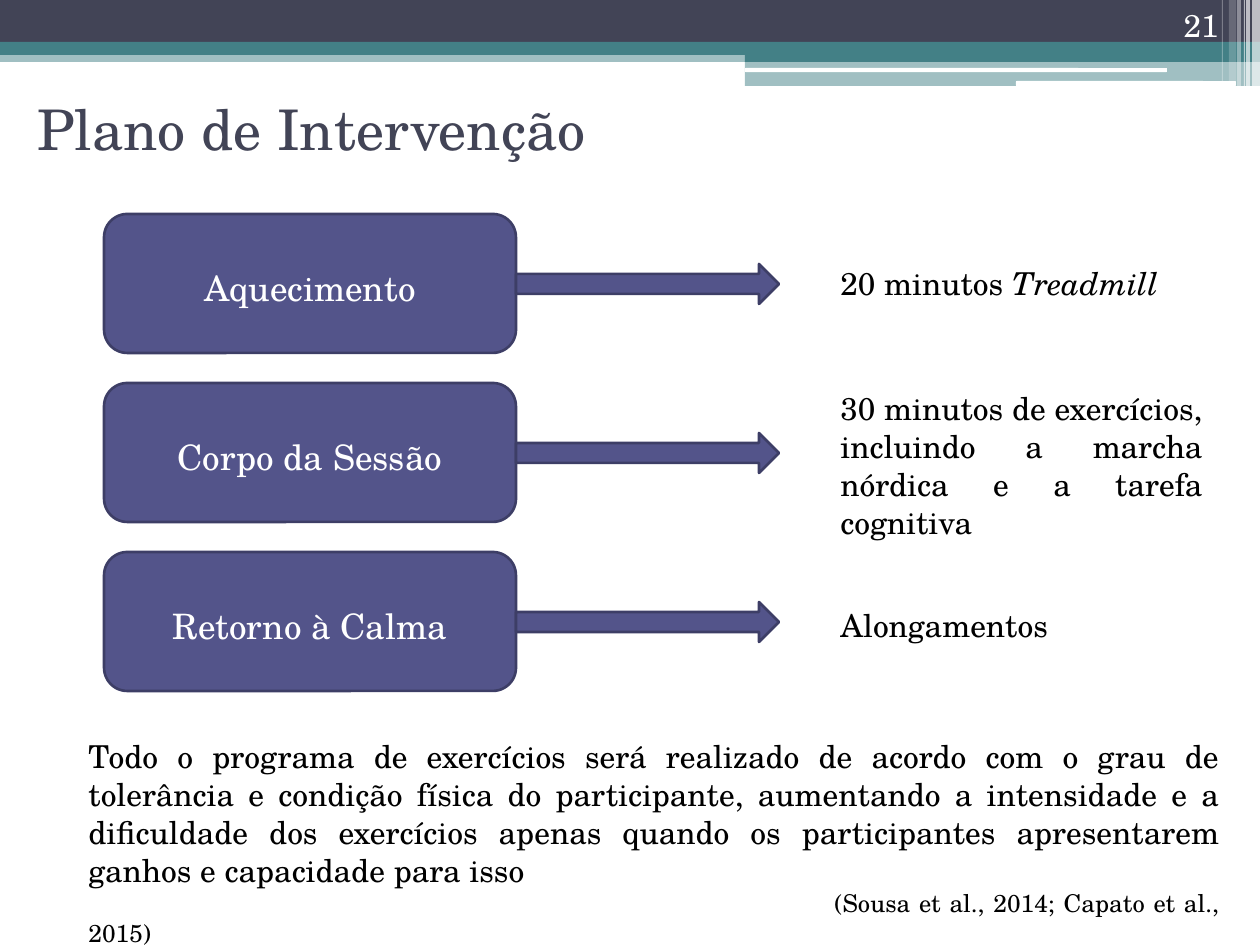
from pptx import Presentation, util as u
from pptx.dml.color import RGBColor
from pptx.enum import shapes, text
from pptx.oxml.ns import qn
from lxml import etree

SCALE = 914400 / 126  # EMU per px
FONT = "TeX Gyre Schola"
NAVY, TEAL, WHITE, BLACK = "424456", "438086", "FFFFFF", "000000"
INDIGO, OUTLINE = "53548A", "3D3E66"
RECT = shapes.MSO_SHAPE.RECTANGLE
ROUNDED = shapes.MSO_SHAPE.ROUNDED_RECTANGLE
ARROW = shapes.MSO_SHAPE.RIGHT_ARROW
LEFT, RIGHT = text.PP_ALIGN.LEFT, text.PP_ALIGN.RIGHT
CENTER, JUSTIFY = text.PP_ALIGN.CENTER, text.PP_ALIGN.JUSTIFY
TOP, MIDDLE, BOTTOM = text.MSO_ANCHOR.TOP, text.MSO_ANCHOR.MIDDLE, text.MSO_ANCHOR.BOTTOM

# preset, (left, top, width, height), fill, opacity %
HEADER_BANDS = [
    (RECT, (0, 50, 1260, 12), TEAL, 50),
    (RECT, (0, 0, 1260, 43), NAVY, 100),
    (RECT, (0, 42, 1260, 13), TEAL, 100),
    (RECT, (745, 49, 515, 13), TEAL, 100),
    (RECT, (745, 61, 515, 25), TEAL, 50),
    (ROUNDED, (745, 68, 422, 4), WHITE, 100),
    (ROUNDED, (1016, 81, 220, 5), WHITE, 100),
]
# left, width, height, opacity %
HEADER_STRIPES = [
    (1252, 8, 86, 65), (1246, 4, 86, 65), (1244, 1, 86, 60),
    (1237, 4, 86, 40), (1229, 7, 81, 20), (1222, 1, 81, 30),
]
# phase, description runs (text, italic), description top, height, alignment
PHASES = [
    ("Aquecimento", [("20 minutos ", False), ("Treadmill", True)], 258, 50, LEFT),
    ("Corpo da Sessão",
     [("30 minutos de exercícios, incluindo a marcha nórdica e a tarefa cognitiva", False)],
     383, 165, JUSTIFY),
    ("Retorno à Calma", [("Alongamentos", False)], 600, 50, LEFT),
]
PHASE_TOP, PHASE_PITCH = 214, 169
NOTE = ("Todo o programa de exercícios será realizado de acordo com o grau de tolerância "
        "e condição física do participante, aumentando a intensidade e a dificuldade dos "
        "exercícios apenas quando os participantes apresentarem ganhos e capacidade para isso")
CITATION = "(Sousa et al., 2014; Capato et al., 2015)"
CITATION_INDENT = 746


def px(length):
    return u.Emu(round(length * SCALE))


def color(value):
    return RGBColor.from_string(value)


def add_box(slide, preset, box, fill, opacity=100, line=None):
    shape = slide.shapes.add_shape(preset, *map(px, box))
    shape.shadow.inherit = False
    shape.fill.solid()
    shape.fill.fore_color.rgb = color(fill)
    if opacity < 100:
        fill_color = shape._element.spPr.find(qn("a:solidFill"))[0]
        etree.SubElement(fill_color, qn("a:alpha"), val=str(opacity * 1000))
    if line:
        shape.line.color.rgb = color(line)
        shape.line.width = u.Pt(1.5)
    else:
        shape.line.fill.background()
    return shape


def write(paragraph, runs, size, fill=BLACK, align=LEFT):
    for words, italic in runs:
        run = paragraph.add_run()
        run.text = words
        if italic:
            run.font.italic = True
    paragraph.alignment = align
    paragraph.font.name = FONT
    paragraph.font.size = u.Pt(size)
    paragraph.font.color.rgb = color(fill)


def add_text(slide, box, runs, size, fill=BLACK, align=LEFT, anchor=TOP):
    frame = slide.shapes.add_textbox(*map(px, box)).text_frame
    frame.word_wrap = True
    frame.vertical_anchor = anchor
    write(frame.paragraphs[0], runs, size, fill, align)
    return frame


def add_header(slide):
    for preset, box, fill, opacity in HEADER_BANDS:
        add_box(slide, preset, box, fill, opacity)
    for left, width, height, opacity in HEADER_STRIPES:
        add_box(slide, RECT, (left, 0, width, height), WHITE, opacity)
    add_text(slide, (25, 55, 1134, 147), [("Plano de Intervenção", False)], 32, NAVY,
             anchor=MIDDLE)
    add_text(slide, (1126, 0, 105, 50), [("21", False)], 18, WHITE, RIGHT, BOTTOM)


def add_phases(slide):
    for index, (phase, description, top, height, align) in enumerate(PHASES):
        box_top = PHASE_TOP + index * PHASE_PITCH
        box = add_box(slide, ROUNDED, (104, box_top, 412, 139), INDIGO, line=OUTLINE)
        box.text_frame.margin_top = px(14)
        box.text_frame.vertical_anchor = MIDDLE
        write(box.text_frame.paragraphs[0], [(phase, False)], 20, WHITE, CENTER)
        add_box(slide, ARROW, (516, box_top + 50, 263, 40), INDIGO, line=OUTLINE)
        add_text(slide, (828, top, 387, height), description, 18, align=align)


def add_note(slide):
    frame = add_text(slide, (76, 731, 1156, 233), [(NOTE, False)], 18, align=JUSTIFY)
    citation = frame.add_paragraph()
    write(citation, [(CITATION, False)], 14, align=JUSTIFY)
    citation._p.get_or_add_pPr().set("indent", str(px(CITATION_INDENT)))


def main():
    presentation = Presentation()
    presentation.slide_width, presentation.slide_height = px(1260), px(945)
    slide = presentation.slides.add_slide(presentation.slide_layouts[6])
    add_header(slide)
    add_note(slide)
    add_phases(slide)
    presentation.save("out.pptx")


if __name__ == "__main__":
    main()
